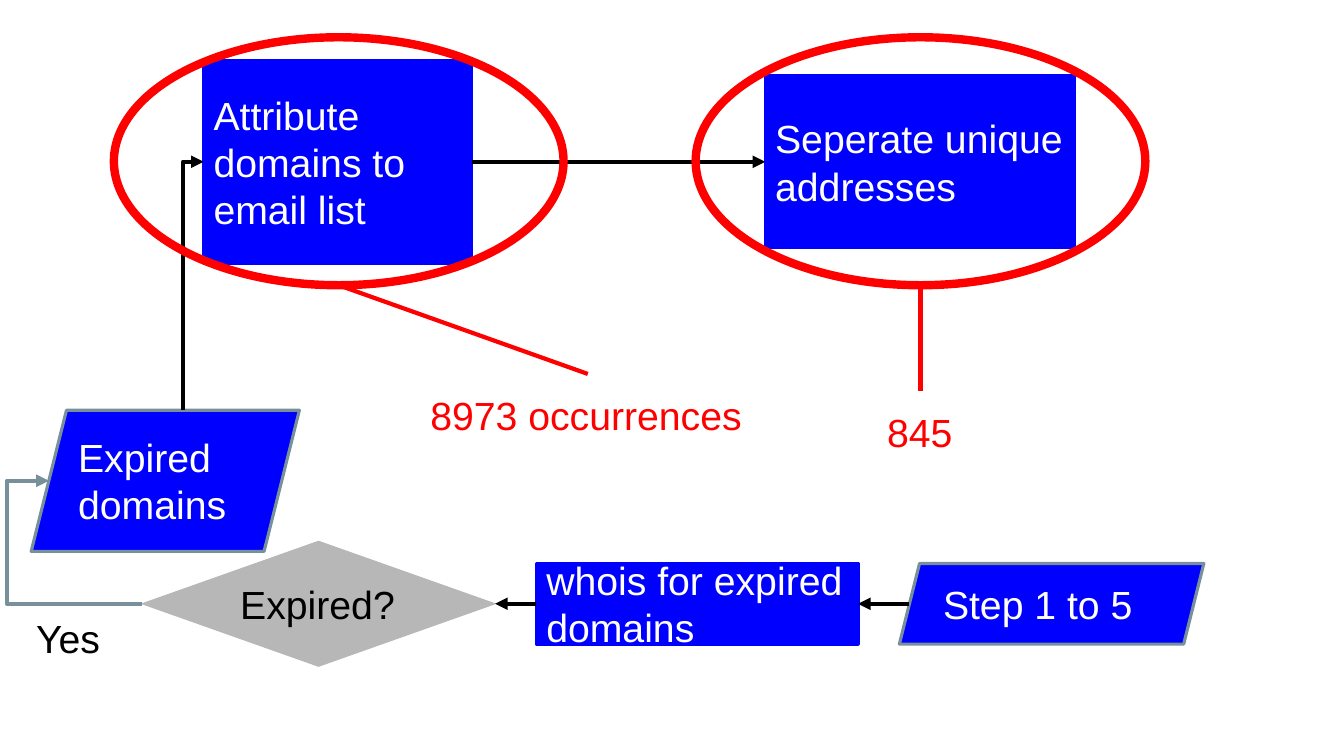
"""Draw the flow chart that turns expired domains into unique addresses."""
from dataclasses import dataclass
from typing import Optional

from lxml.etree import SubElement
from pptx import Presentation
from pptx.dml.color import RGBColor
from pptx.enum.shapes import MSO_CONNECTOR, MSO_SHAPE
from pptx.enum.text import MSO_ANCHOR, PP_ALIGN
from pptx.oxml.ns import qn
from pptx.util import Inches, Pt

HEX = {"blue": "0000FF", "slate": "78909C", "grey": "B7B7B7",
       "red": "FF0000", "black": "000000", "white": "FFFFFF"}
WIDE, HIGH = Inches(13.33), Inches(7.5)
COLS, ROWS = 133.3, 75
SLANT = 0.25


@dataclass
class Node:
    x: float
    y: float
    w: float
    h: float
    text: str = ""
    form: MSO_SHAPE = MSO_SHAPE.RECTANGLE
    fill: Optional[str] = "blue"
    line: str = "blue"
    thick: float = 2.25
    ink: str = "white"

    @property
    def inset(self) -> float:
        return SLANT * self.h / 2 if self.form == MSO_SHAPE.PARALLELOGRAM else 0

    @property
    def left(self) -> tuple:
        return self.x + self.inset, self.y + self.h / 2

    @property
    def right(self) -> tuple:
        return self.x + self.w - self.inset, self.y + self.h / 2

    @property
    def top(self) -> tuple:
        return self.x + self.w / 2 + self.inset, self.y

    @property
    def base(self) -> tuple:
        return self.x + self.w / 2 - self.inset, self.y + self.h


@dataclass
class Link:
    start: tuple
    end: tuple
    ink: str = "black"
    arrow: bool = True
    bend: Optional[float] = None


@dataclass
class Label:
    x: float
    y: float
    w: float
    text: str
    ink: str = "red"
    space: float = 1.15


def col(n: float) -> int:
    return round(WIDE * n / COLS)


def row(n: float) -> int:
    return round(HIGH * n / ROWS)


def tint(name: str) -> RGBColor:
    return RGBColor.from_string(HEX[name])


def write(frame, text: str, *, ink: str, space: float = 1.0,
          anchor=MSO_ANCHOR.MIDDLE, size: int = 28, face: str = "Arial") -> None:
    frame.word_wrap = True
    frame.vertical_anchor = anchor
    frame.margin_left = frame.margin_right = Inches(0.1)
    frame.margin_top = frame.margin_bottom = Inches(0.1)
    para = frame.paragraphs[0]
    para.alignment = PP_ALIGN.LEFT
    para.line_spacing = space
    run = para.add_run()
    run.text = text
    run.font.name, run.font.size = face, Pt(size)
    run.font.color.rgb = tint(ink)


def draw_node(slide, node: Node) -> None:
    shape = slide.shapes.add_shape(
        node.form, col(node.x), row(node.y), col(node.w), row(node.h))
    shape.shadow.inherit = False
    if node.fill:
        shape.fill.solid()
        shape.fill.fore_color.rgb = tint(node.fill)
    else:
        shape.fill.background()
    shape.line.color.rgb = tint(node.line)
    shape.line.width = Pt(node.thick)
    if node.form == MSO_SHAPE.PARALLELOGRAM:
        shape.adjustments[0] = SLANT
    if node.text:
        write(shape.text_frame, node.text, ink=node.ink)


def draw_link(slide, link: Link) -> None:
    kind = MSO_CONNECTOR.STRAIGHT if link.bend is None else MSO_CONNECTOR.ELBOW
    (x1, y1), (x2, y2) = link.start, link.end
    wire = slide.shapes.add_connector(kind, col(x1), row(y1), col(x2), row(y2))
    wire.line.color.rgb = tint(link.ink)
    wire.line.width = Pt(3)
    props = wire.element.spPr
    if link.arrow:
        SubElement(props.find(qn("a:ln")), qn("a:tailEnd"), type="triangle")
    if link.bend is not None:
        guides = props.find(qn("a:prstGeom")).find(qn("a:avLst"))
        SubElement(guides, qn("a:gd"), name="adj1",
                   fmla=f"val {round(link.bend * 100000)}")
    SubElement(props, qn("a:effectLst"))


def draw_label(slide, label: Label) -> None:
    box = slide.shapes.add_textbox(
        col(label.x), row(label.y), col(label.w), row(6.7))
    write(box.text_frame, label.text, ink=label.ink, space=label.space,
          anchor=MSO_ANCHOR.TOP)


def main() -> None:
    deck = Presentation()
    deck.slide_width, deck.slide_height = WIDE, HIGH
    slide = deck.slides.add_slide(deck.slide_layouts[6])

    skew = MSO_SHAPE.PARALLELOGRAM
    steps = Node(89.2, 55.9, 30.2, 8, "Step 1 to 5", skew, line="slate")
    whois = Node(53.2, 55.9, 31.9, 8, "whois for expired domains")
    check = Node(14.1, 53.7, 35, 12.4, "Expired?", MSO_SHAPE.DIAMOND,
                 "grey", "grey", 0.75, "black")
    gone = Node(3.1, 40.7, 26.6, 14, "Expired domains", skew, line="slate")
    match = Node(20.2, 6, 26.6, 20.1, "Attribute domains to email list")
    split = Node(75.9, 7.5, 30.7, 17.1, "Seperate unique addresses")
    rings = [Node(x, 3.7, 44.6, 24.6, form=MSO_SHAPE.OVAL, fill=None,
                  line="red", thick=6) for x in (11.3, 69)]

    links = [
        Link(steps.left, whois.right),
        Link(whois.left, check.right),
        Link(check.left, gone.left, "slate", bend=1.45),
        Link(gone.top, match.left, bend=0),
        Link(match.right, split.left),
        Link(rings[0].base, (58.3, 37.1), "red", arrow=False),
        Link(rings[1].base, (91.3, 38.8), "red", arrow=False),
    ]
    labels = [
        Label(2.6, 59.9, 9.3, "Yes", "black", 1.0),
        Label(41.7, 37.1, 33.3, "8973 occurrences"),
        Label(87, 38.8, 8.6, "845"),
    ]

    for node in (gone, split, whois, steps, check, match):
        draw_node(slide, node)
    for link in links:
        draw_link(slide, link)
    for ring in rings:
        draw_node(slide, ring)
    for label in labels:
        draw_label(slide, label)
    deck.save("out.pptx")


if __name__ == "__main__":
    main()
